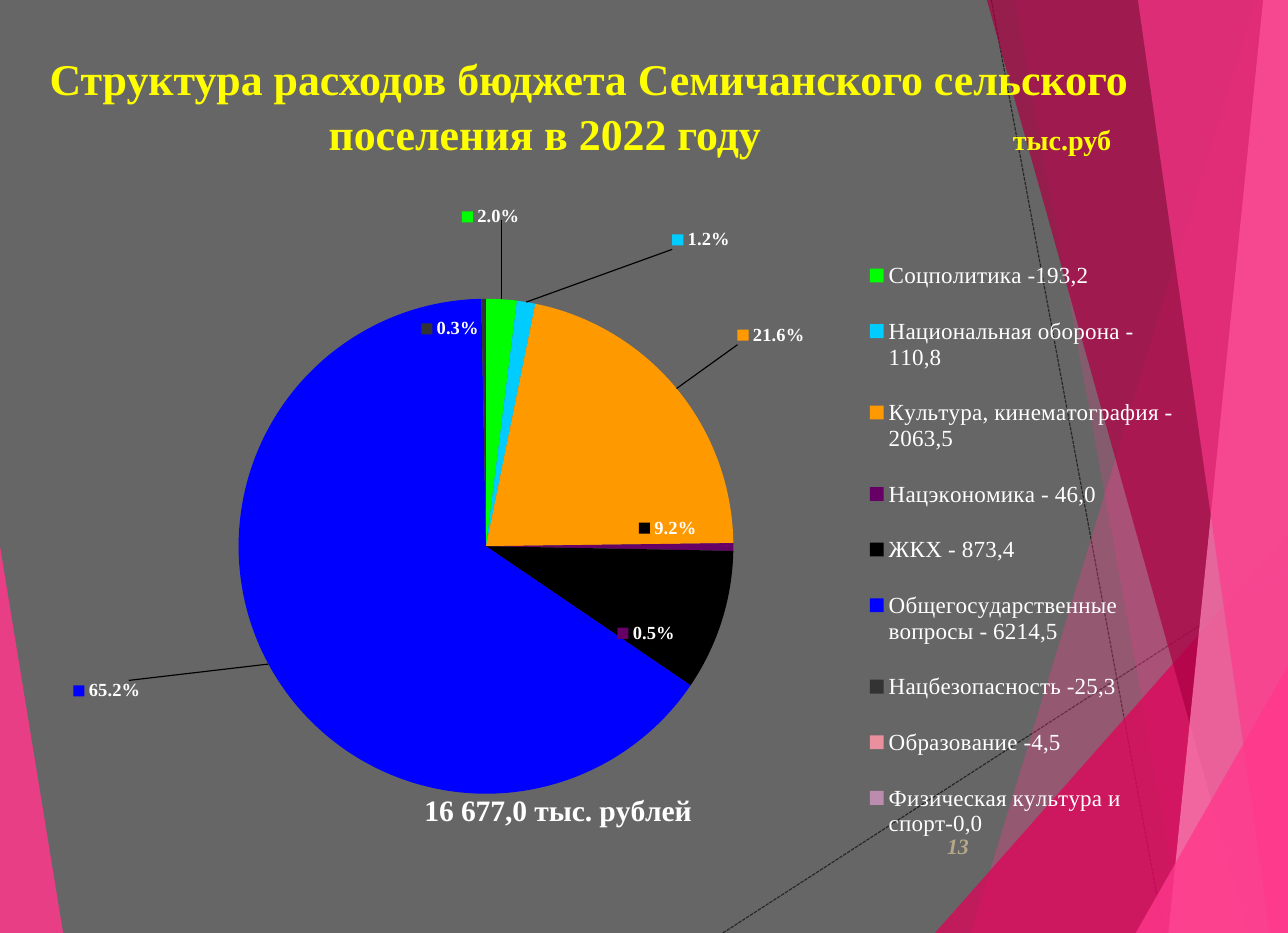
from dataclasses import dataclass

from lxml.etree import SubElement
from pptx import Presentation
from pptx.chart.data import CategoryChartData
from pptx.dml.color import RGBColor
from pptx.enum.chart import XL_CHART_TYPE, XL_LABEL_POSITION, XL_LEGEND_POSITION
from pptx.enum.dml import MSO_LINE
from pptx.enum.shapes import MSO_CONNECTOR
from pptx.enum.text import MSO_ANCHOR, MSO_AUTO_SIZE, PP_ALIGN
from pptx.oxml import parse_xml
from pptx.oxml.ns import nsdecls, qn
from pptx.util import Inches, Pt


@dataclass(frozen=True)
class Theme:
    font: str = "Times New Roman"
    background: str = "666666"
    title: str = "FFFF00"
    text: str = "FFFFFF"
    page_number: str = "B5A788"
    dashes: str = "262626"
    leader: str = "000000"
    title_size: float = 28
    unit_size: float = 18
    total_size: float = 18.9
    legend_size: float = 14.7
    label_size: float = 11.8
    page_size: float = 14


THEME = Theme()
WIDTH, HEIGHT = 11.42, 8.27

DASHED_LINES = [((6.41, HEIGHT), (WIDTH, 5.04)), ((8.79, 0), (10.32, HEIGHT))]

# Colour, opacity in percent, corners
FACETS = [
    ("FF388C", 85, [(0, 4.84), (0.56, HEIGHT), (0, HEIGHT)]),
    ("FF388C", 30, [(11.13, 0), (8.61, HEIGHT), (WIDTH, HEIGHT), (WIDTH, 0)]),
    ("FF388C", 20, [(9, 0), (10.5, HEIGHT), (WIDTH, HEIGHT), (WIDTH, 0)]),
    ("E40059", 72, [(8.29, HEIGHT), (WIDTH, 4.73), (WIDTH, HEIGHT)]),
    ("AB0043", 70, [(8.75, 0), (11.07, HEIGHT), (WIDTH, HEIGHT), (WIDTH, 0)]),
    ("FF88BA", 70, [(11.2, 0), (10.36, HEIGHT), (WIDTH, HEIGHT), (WIDTH, 0)]),
    ("FF388C", 65, [(10.09, 0), (11.26, HEIGHT), (WIDTH, HEIGHT), (WIDTH, 0)]),
    ("FF388C", 80, [(10.07, HEIGHT), (WIDTH, 5.9), (WIDTH, HEIGHT)]),
]

# Category, share, colour, label shift as a share of the chart size
EXPENSES = [
    ("Соцполитика -193,2", 0.02, "00FF00", (-0.01, -0.11)),
    ("Национальная оборона - 110,8", 0.012, "00CCFF", (0.13, -0.07)),
    ("Культура, кинематография - 2063,5", 0.216, "FF9900", (0.05, -0.06)),
    ("Нацэкономика - 46,0", 0.005, "660066", (-0.11, 0.13)),
    ("ЖКХ - 873,4", 0.092, "000000", (-0.08, -0.16)),
    ("Общегосударственные вопросы - 6214,5", 0.652, "0000FF", (-0.12, 0.02)),
    ("Нацбезопасность -25,3", 0.003, "333333", (-0.03, 0.07)),
    ("Образование -4,5", 0, "E98F9D", (-0.12, -0.03)),
    ("Физическая культура и спорт-0,0", 0, "BB8CAE", None),
]


def style_font(font, size, color, bold=False, italic=False):
    font.name = THEME.font
    font.size = Pt(size)
    font.bold = bold
    font.italic = italic
    font.color.rgb = RGBColor.from_string(color)


def add_dashed_line(slide, start, end):
    line = slide.shapes.add_connector(
        MSO_CONNECTOR.STRAIGHT, *(Inches(value) for value in start + end))
    line.line.color.rgb = RGBColor.from_string(THEME.dashes)
    line.line.width = Pt(0.75)
    line.line.dash_style = MSO_LINE.SQUARE_DOT
    SubElement(line.element.spPr, qn("a:effectLst"))


def add_facet(slide, color, opacity, corners):
    points = [(Inches(x), Inches(y)) for x, y in corners]
    builder = slide.shapes.build_freeform(*points[0])
    builder.add_line_segments(points[1:], close=True)
    facet = builder.convert_to_shape()
    facet.shadow.inherit = False
    facet.fill.solid()
    facet.fill.fore_color.rgb = RGBColor.from_string(color)
    facet.line.fill.background()
    color_element = facet.element.spPr.find(qn("a:solidFill")).find(qn("a:srgbClr"))
    SubElement(color_element, qn("a:alpha"), val=str(opacity * 1000))


def add_title(slide):
    title = slide.shapes.title
    title.left, title.top = Inches(0.28), Inches(0.37)
    title.width, title.height = Inches(9.88), Inches(1.06)
    frame = title.text_frame
    frame.auto_size = MSO_AUTO_SIZE.NONE
    frame.vertical_anchor = MSO_ANCHOR.TOP
    frame.margin_left = frame.margin_right = Inches(0.11)
    frame.margin_top = frame.margin_bottom = Inches(0.06)
    frame.text = "Структура расходов бюджета Семичанского сельского"
    heading, second_line = frame.paragraphs[0], frame.add_paragraph()
    heading.alignment = PP_ALIGN.CENTER
    second_line.alignment = PP_ALIGN.LEFT
    second_line.text = "\tпоселения в 2022 году\t"
    second_line.add_run().text = "тыс.руб"
    for paragraph in frame.paragraphs:
        paragraph.line_spacing = 1.05
        for run in paragraph.runs:
            style_font(run.font, THEME.title_size, THEME.title, bold=True)
    second_line.runs[-1].font.size = Pt(THEME.unit_size)
    properties = second_line.runs[0].font  # ensures run properties exist before tabs
    properties.bold = True
    tabs = SubElement(second_line._p.get_or_add_pPr(), qn("a:tabLst"))
    for position, alignment in ((4.44, "ctr"), (8.59, "l")):
        SubElement(tabs, qn("a:tab"), pos=str(Inches(position)), algn=alignment)
    title.element.getparent().append(title.element)


def add_page_number(slide):
    box = slide.shapes.add_textbox(Inches(8.05), Inches(7.28), Inches(0.64), Inches(0.44))
    frame = box.text_frame
    frame.word_wrap = True
    frame.vertical_anchor = MSO_ANCHOR.MIDDLE
    frame.text = "13"
    frame.paragraphs[0].alignment = PP_ALIGN.RIGHT
    style_font(frame.paragraphs[0].runs[0].font, THEME.page_size,
               THEME.page_number, bold=True, italic=True)


def set_layout(parent, index, **settings):
    """Give a chart part a manual layout, as the child at the given index."""
    for old_layout in parent.findall(qn("c:layout")):
        parent.remove(old_layout)
    layout = parse_xml(f"<c:layout {nsdecls('c')}><c:manualLayout/></c:layout>")
    for name, value in settings.items():
        SubElement(layout[0], qn(f"c:{name}"), val=str(value))
    parent.insert(index, layout)


def format_labels(chart, series):
    labels = series.data_labels
    labels.show_value = True
    labels.show_legend_key = True
    labels.number_format = "0.0%"
    labels.number_format_is_linked = False
    labels.position = XL_LABEL_POSITION.OUTSIDE_END
    style_font(labels.font, THEME.label_size, THEME.text, bold=True)
    for index in range(len(EXPENSES)):
        label = series.points[index].data_label
        style_font(label.font, THEME.label_size, THEME.text, bold=True)
        label.position = XL_LABEL_POSITION.OUTSIDE_END
    for element, (*_, shift) in zip(chart.element.xpath(".//c:dLbl"), EXPENSES):
        if shift is None:
            for child in list(element)[1:]:
                element.remove(child)
            SubElement(element, qn("c:delete"), val="1")
            continue
        set_layout(element, 1, x=shift[0], y=shift[1])
        element.insert(2, parse_xml(
            f'<c:numFmt {nsdecls("c")} formatCode="0.0%" sourceLinked="0"/>'))
        element.find(qn("c:showLegendKey")).set("val", "1")
    group = chart.element.xpath(".//c:ser/c:dLbls")[0]
    for old_setting in group.findall(qn("c:showLeaderLines")):
        group.remove(old_setting)
    SubElement(group, qn("c:showLeaderLines"), val="1")
    group.append(parse_xml(
        f'<c:leaderLines {nsdecls("c", "a")}><c:spPr><a:ln w="9525"><a:solidFill>'
        f'<a:srgbClr val="{THEME.leader}"/></a:solidFill></a:ln></c:spPr></c:leaderLines>'))


def add_expense_chart(slide):
    data = CategoryChartData(number_format="0.0%")
    data.categories = [name for name, *_ in EXPENSES]
    data.add_series("Series 1", [share for _, share, *_ in EXPENSES])
    chart = slide.shapes.add_chart(
        XL_CHART_TYPE.PIE, Inches(0.65), Inches(1.83), Inches(9.89), Inches(5.85), data).chart
    style_font(chart.font, THEME.total_size, THEME.text)
    plot = chart.plots[0]
    plot.vary_by_categories = True
    series = plot.series[0]
    for index, (_, _, color, _) in enumerate(EXPENSES):
        slice_format = series.points[index].format
        slice_format.fill.solid()
        slice_format.fill.fore_color.rgb = RGBColor.from_string(color)
        slice_format.line.fill.background()
    format_labels(chart, series)

    total = chart.chart_title.text_frame
    total.text = "16 677,0 тыс. рублей"
    style_font(total.paragraphs[0].runs[0].font, THEME.total_size, THEME.text, bold=True)
    chart.has_legend = True
    chart.legend.position = XL_LEGEND_POSITION.RIGHT
    chart.legend.include_in_layout = False
    style_font(chart.legend.font, THEME.legend_size, THEME.text)

    edges = {"xMode": "edge", "yMode": "edge"}
    area = chart.element.chart
    set_layout(area.find(qn("c:title")), 1, **edges, x=0.31, y=0.88)
    set_layout(area.find(qn("c:legend")), 1, **edges, x=0.71, y=0.04, w=0.28, h=0.96)
    set_layout(area.find(qn("c:plotArea")), 0, layoutTarget="inner", **edges,
               x=0, y=0.14, w=0.74, h=0.75)


def main():
    presentation = Presentation()
    presentation.slide_width, presentation.slide_height = Inches(WIDTH), Inches(HEIGHT)
    slide = presentation.slides.add_slide(presentation.slide_layouts[5])
    slide.background.fill.solid()
    slide.background.fill.fore_color.rgb = RGBColor.from_string(THEME.background)
    for start, end in DASHED_LINES:
        add_dashed_line(slide, start, end)
    for facet in FACETS:
        add_facet(slide, *facet)
    add_page_number(slide)
    add_expense_chart(slide)
    add_title(slide)
    presentation.save("out.pptx")


if __name__ == "__main__":
    main()
